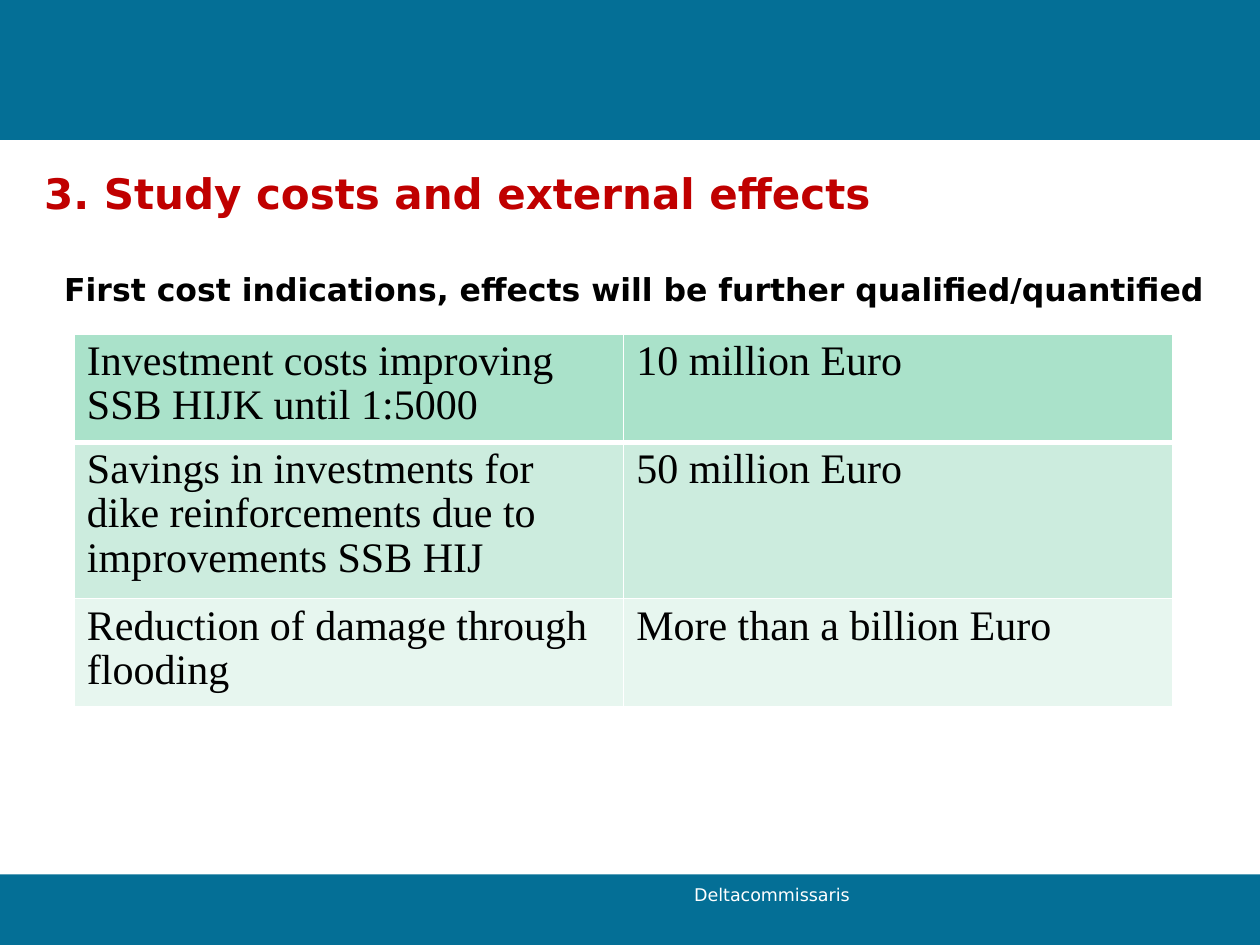
from dataclasses import dataclass

import pptx
import pptx.dml.color
import pptx.enum.shapes
import pptx.enum.text
import pptx.oxml
import pptx.oxml.ns
import pptx.util
from pptx.util import Inches

COLORS = {
    "band": "046F96",
    "white": "FFFFFF",
    "black": "000000",
    "title": "C00000",
    "row_dark": "AAE2CA",
    "row_medium": "CCECDE",
    "row_light": "E7F6EF",
}
HEADING_FONT = "DejaVu Sans"
TABLE_FONT = "Times New Roman"
SLIDE_WIDTH = 10
SLIDE_HEIGHT = 7.5


@dataclass
class Band:
    top: float
    height: float


@dataclass
class CostRow:
    item: str
    amount: str
    fill: str
    height: float
    bottom_border: float = 1


BANDS = [Band(0, 1.11), Band(6.94, 0.56)]
COST_ROWS = [
    CostRow("Investment costs improving SSB HIJK until 1:5000",
            "10 million Euro", "row_dark", 0.85, bottom_border=3),
    CostRow("Savings in investments for dike reinforcements due to improvements SSB HIJ",
            "50 million Euro", "row_medium", 1.21),
    CostRow("Reduction of damage through flooding",
            "More than a billion Euro", "row_light", 0.83),
]


def rgb(name: str) -> pptx.dml.color.RGBColor:
    return pptx.dml.color.RGBColor.from_string(COLORS[name])


def write_text(frame, text: str, *, size: float, font: str, color: str,
               bold: bool = False, line_spacing: float = 1.0) -> None:
    para = frame.paragraphs[0]
    para.line_spacing = line_spacing
    span = para.add_run()
    span.text = text
    span.font.name = font
    span.font.size = pptx.util.Pt(size)
    span.font.bold = bold
    span.font.color.rgb = rgb(color)


def add_band(slide, band: Band) -> None:
    shape = slide.shapes.add_shape(
        pptx.enum.shapes.MSO_SHAPE.RECTANGLE,
        0, Inches(band.top), Inches(SLIDE_WIDTH), Inches(band.height))
    shape.shadow.inherit = False
    shape.fill.solid()
    shape.fill.fore_color.rgb = rgb("band")
    shape.line.fill.background()


def add_text_box(slide, text: str, left: float, top: float, width: float, height: float,
                 *, anchor=pptx.enum.text.MSO_ANCHOR.TOP, **text_format) -> None:
    box = slide.shapes.add_textbox(Inches(left), Inches(top), Inches(width), Inches(height))
    frame = box.text_frame
    frame.word_wrap = True
    frame.vertical_anchor = anchor
    frame.margin_left = frame.margin_top = frame.margin_right = frame.margin_bottom = 0
    write_text(frame, text, font=HEADING_FONT, **text_format)


def set_borders(cell, widths: dict[str, float]) -> None:
    """Give each named side a white line; widths are in points."""
    properties = cell._tc.get_or_add_tcPr()
    namespace = pptx.oxml.ns.nsdecls("a")
    for position, (side, width) in enumerate(widths.items()):
        properties.insert(position, pptx.oxml.parse_xml(
            f'<a:{side} {namespace} w="{pptx.util.Pt(width)}"><a:solidFill>'
            f'<a:srgbClr val="{COLORS["white"]}"/></a:solidFill></a:{side}>'))


def add_cost_table(slide, rows: list[CostRow], left: float, top: float,
                   column_width: float) -> None:
    table = slide.shapes.add_table(
        len(rows), 2, Inches(left), Inches(top), Inches(2 * column_width),
        Inches(sum(row.height for row in rows))).table
    for column in table.columns:
        column.width = Inches(column_width)
    top_border = 1
    for row_index, row in enumerate(rows):
        table.rows[row_index].height = Inches(row.height)
        for column_index, text in enumerate((row.item, row.amount)):
            cell = table.cell(row_index, column_index)
            cell.fill.solid()
            cell.fill.fore_color.rgb = rgb(row.fill)
            set_borders(cell, {"lnL": 1, "lnR": 1, "lnT": top_border, "lnB": row.bottom_border})
            write_text(cell.text_frame, text, size=24, font=TABLE_FONT,
                       color="black", line_spacing=0.95)
        top_border = row.bottom_border


def main() -> None:
    deck = pptx.Presentation()
    deck.slide_width = Inches(SLIDE_WIDTH)
    deck.slide_height = Inches(SLIDE_HEIGHT)
    slide = deck.slides.add_slide(deck.slide_layouts[6])

    for band in BANDS:
        add_band(slide, band)
    add_text_box(slide, "Deltacommissaris", 5.51, 7.02, 3.45, 0.13, size=10, color="white")
    add_text_box(slide, "First cost indications, effects will be further qualified/quantified",
                 0.51, 2.14, 9.29, 0.4, size=18, color="black", bold=True, line_spacing=1.01)
    add_text_box(slide, "3. Study costs and external effects", 0.35, 1.31, 9.19, 0.44,
                 anchor=pptx.enum.text.MSO_ANCHOR.MIDDLE,
                 size=24, color="title", bold=True, line_spacing=1.01)
    add_cost_table(slide, COST_ROWS, 0.59, 2.65, 4.36)

    deck.save("out.pptx")


if __name__ == "__main__":
    main()
